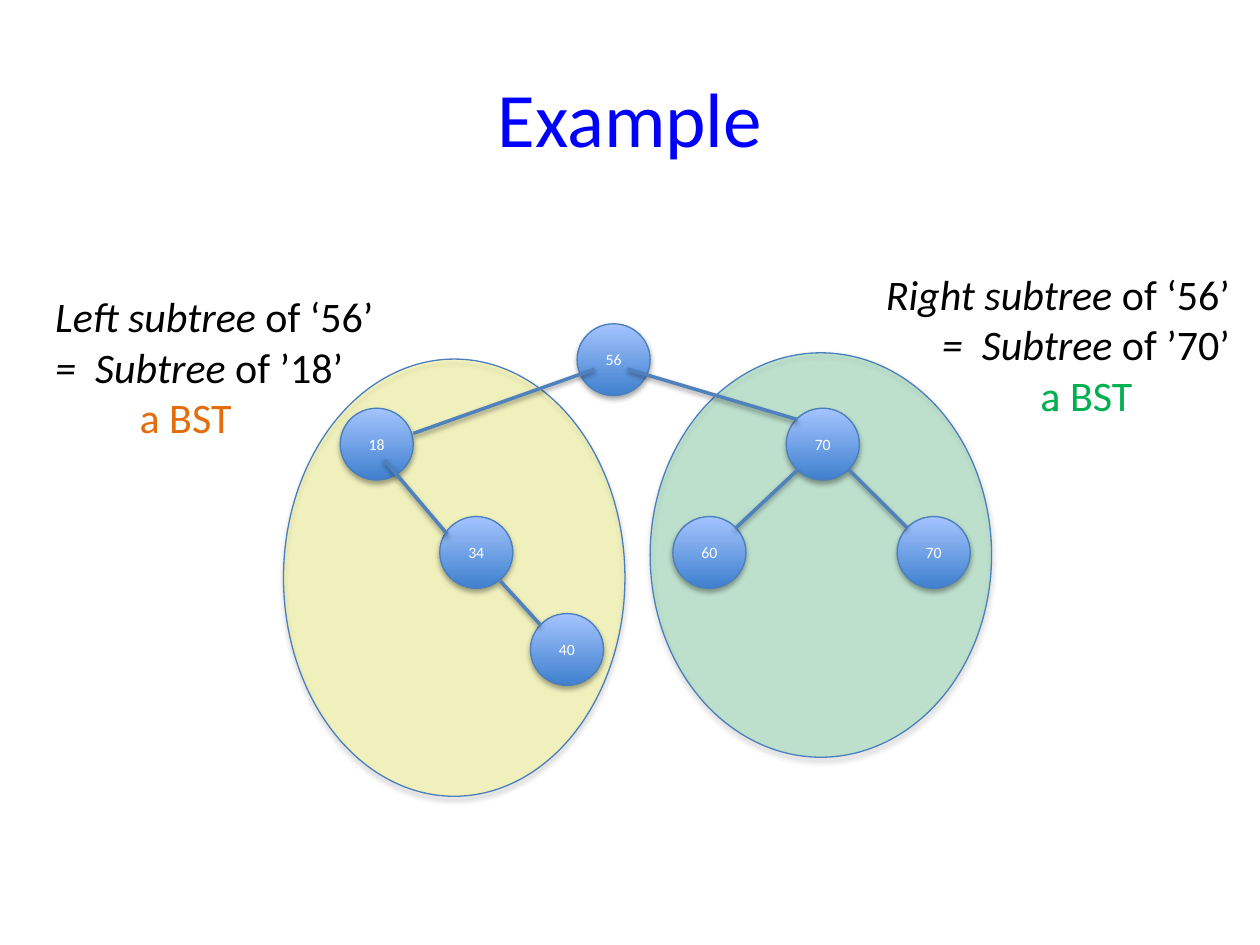
from lxml.etree import SubElement
from pptx import Presentation
from pptx.dml.color import RGBColor
from pptx.enum.shapes import MSO_CONNECTOR, MSO_SHAPE
from pptx.enum.text import MSO_ANCHOR, PP_ALIGN
from pptx.oxml.ns import qn
from pptx.util import Inches, Pt

COLORS = {
    "title": "0000FF",
    "text": "000000",
    "left": "E46C0A",
    "right": "00B050",
    "left_area": "FFFF00",
    "right_area": "00B050",
    "outline": "4B7EBC",
    "edge": "4F81BD",
    "node_bottom": "3F80CE",
    "node_top": "A4C4FF",
    "node_text": "FFFFFF",
}
NODE_SIZE = (0.58, 0.57)
NODES = [
    ("18", 0, 0.67),
    ("56", 1.88, 0),
    ("70", 3.54, 0.67),
    ("34", 0.79, 1.53),
    ("40", 1.51, 2.3),
    ("60", 2.64, 1.53),
    ("70", 4.42, 1.53),
]
EDGES = [
    (0.35, 1.08, 0.85, 1.67),
    (0.58, 0.87, 2.02, 0.36),
    (2.28, 0.36, 3.63, 0.76),
    (1.27, 2.04, 1.59, 2.39),
    (3.14, 1.62, 3.63, 1.16),
    (4.5, 1.62, 4.04, 1.16),
]


def color(name):
    return RGBColor.from_string(COLORS[name])


def set_font(paragraph, size, name):
    paragraph.font.name = "Calibri"
    paragraph.font.size = Pt(size)
    paragraph.font.color.rgb = color(name)


def add_shadow(part, distance, opacity):
    effects = SubElement(part._element.spPr, qn("a:effectLst"))
    shadow = SubElement(effects, qn("a:outerShdw"), blurRad=str(Pt(3.1)),
                        dist=str(Pt(distance)), dir="5400000", rotWithShape="0")
    black = SubElement(shadow, qn("a:srgbClr"), val="000000")
    SubElement(black, qn("a:alpha"), val=str(opacity * 1000))


def add_ellipse(shapes, box):
    ellipse = shapes.add_shape(MSO_SHAPE.OVAL, *map(Inches, box))
    ellipse.line.color.rgb = color("outline")
    ellipse.line.width = Pt(0.75)
    return ellipse


def add_subtree_area(slide, box, fill):
    area = add_ellipse(slide.shapes, box)
    area.fill.solid()
    area.fill.fore_color.rgb = color(fill)
    tint = area._element.spPr.find(qn("a:solidFill")).find(qn("a:srgbClr"))
    SubElement(tint, qn("a:alpha"), val="20000")
    add_shadow(area, 1.8, 35)


def add_node(shapes, box, key):
    node = add_ellipse(shapes, box)
    node.fill.gradient()
    node.fill.gradient_angle = 90
    for stop, name in zip(node.fill.gradient_stops, ("node_bottom", "node_top")):
        stop.color.rgb = color(name)
    add_shadow(node, 1.8, 35)
    node.text_frame.vertical_anchor = MSO_ANCHOR.MIDDLE
    label = node.text_frame.paragraphs[0]
    label.text = key
    label.alignment = PP_ALIGN.CENTER
    set_font(label, 9, "node_text")


def add_tree(slide, left, top):
    tree = slide.shapes.add_group_shape().shapes
    for key, x, y in NODES:
        add_node(tree, (left + x, top + y, *NODE_SIZE), key)
    for x1, y1, x2, y2 in EDGES:
        ends = (left + x1, top + y1, left + x2, top + y2)
        edge = tree.add_connector(MSO_CONNECTOR.STRAIGHT, *map(Inches, ends))
        edge.line.color.rgb = color("edge")
        edge.line.width = Pt(2)
        add_shadow(edge, 1.6, 38)


def add_caption(slide, box, side, root, alignment):
    frame = slide.shapes.add_textbox(*map(Inches, box)).text_frame
    frame.word_wrap = True
    lines = [(f"{side} subtree", " of ‘56’"), ("=  Subtree ", f"of ’{root}’")]
    for index, (term, rest) in enumerate(lines):
        line = frame.paragraphs[0] if index == 0 else frame.add_paragraph()
        line.alignment = alignment
        set_font(line, 24, "text")
        emphasis = line.add_run()
        emphasis.text = term
        emphasis.font.italic = True
        line.add_run().text = rest
    return frame


def add_verdict(frame, text, name, indent):
    verdict = frame.add_paragraph()
    verdict.text = text
    verdict.alignment = PP_ALIGN.LEFT
    set_font(verdict, 24, name)
    properties = verdict._p.get_or_add_pPr()
    properties.set("marL", "0")
    properties.set("indent", str(Inches(indent)))
    return properties


def add_left_caption(slide, box):
    frame = add_caption(slide, box, "Left", "18", PP_ALIGN.LEFT)
    add_verdict(frame, "a BST", "left", 0.67)


def add_right_caption(slide, box):
    frame = add_caption(slide, box, "Right", "70", PP_ALIGN.RIGHT)
    properties = add_verdict(frame, "a BST\t.", "right", 1.43)
    stops = properties.makeelement(qn("a:tabLst"))
    properties.insert(0, stops)
    SubElement(stops, qn("a:tab"), pos=str(Inches(2.84)), algn="l")


def add_title(slide, box):
    title = slide.shapes.title
    title.left, title.top, title.width, title.height = map(Inches, box)
    title.text_frame.vertical_anchor = MSO_ANCHOR.MIDDLE
    heading = title.text_frame.paragraphs[0]
    heading.text = "Example"
    heading.alignment = PP_ALIGN.CENTER
    set_font(heading, 44, "title")


def main():
    deck = Presentation()
    deck.slide_width, deck.slide_height = Inches(10), Inches(7.5)
    slide = deck.slides.add_slide(deck.slide_layouts[5])
    add_subtree_area(slide, (5.16, 2.8, 2.71, 3.21), "right_area")
    add_subtree_area(slide, (2.25, 2.85, 2.71, 3.47), "left_area")
    add_title(slide, (0.5, 0.3, 9, 1.25))
    add_tree(slide, 2.7, 2.57)
    add_right_caption(slide, (6.73, 2.08, 3.13, 1.31))
    add_left_caption(slide, (0.34, 2.26, 3.2, 1.31))
    deck.save("out.pptx")


if __name__ == "__main__":
    main()
